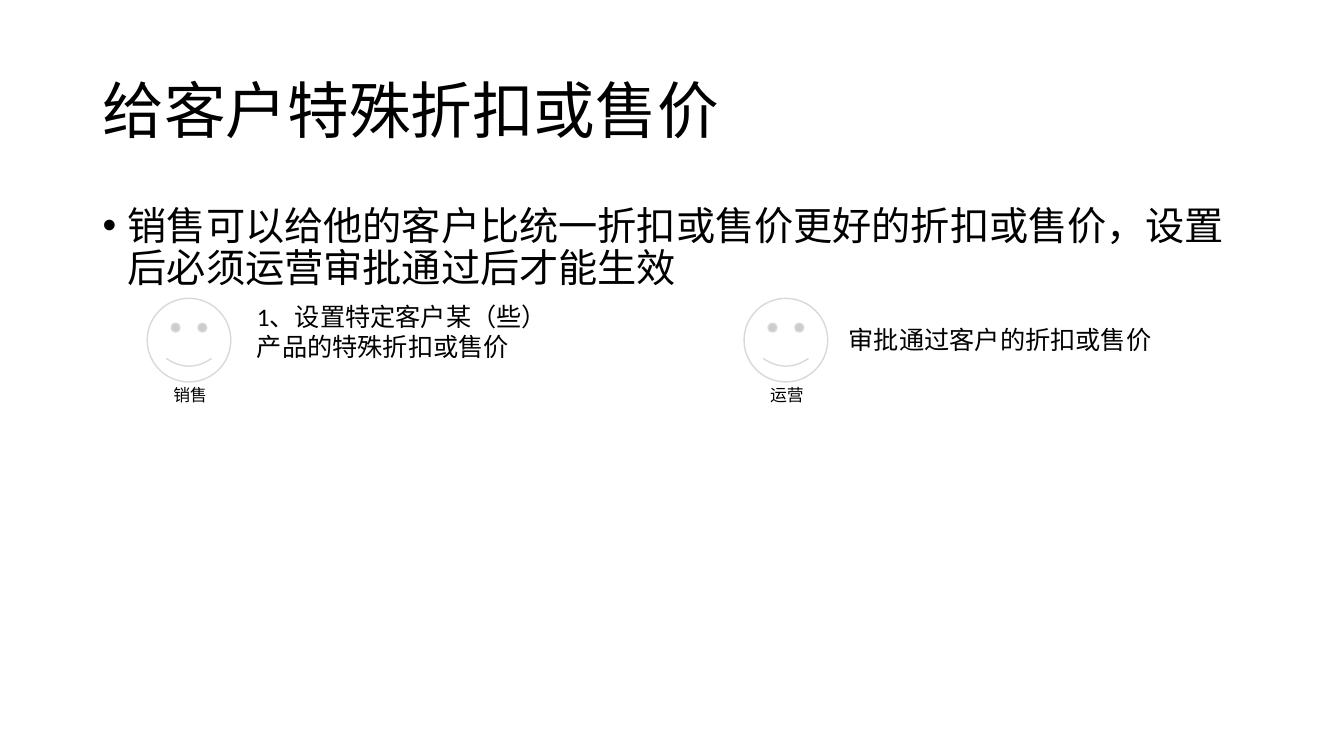
from dataclasses import dataclass

from lxml import etree
from pptx import Presentation
from pptx import util as u
from pptx.dml.color import RGBColor
from pptx.enum import lang, shapes, text
from pptx.oxml.ns import qn


@dataclass(frozen=True)
class Theme:
    font: str = "Calibri"
    ink: RGBColor = RGBColor(0, 0, 0)
    face: RGBColor = RGBColor(255, 255, 255)
    outline: RGBColor = RGBColor(0xD9, 0xD9, 0xD9)
    title: int = 44
    body: int = 28
    step: int = 18
    label: int = 12


THEME = Theme()


def add_text(slide, box, content, size, align=text.PP_ALIGN.LEFT,
             anchor=text.MSO_ANCHOR.TOP, wrap=True, line=1.0, before=0, bullet=None):
    s = slide.shapes.add_textbox(*map(u.Inches, box))
    tf = s.text_frame
    tf.word_wrap = wrap
    tf.vertical_anchor = anchor
    p = tf.paragraphs[0]
    p.alignment = align
    p.line_spacing = line
    p.space_before = u.Pt(before)
    if bullet:
        add_bullet(p, bullet)
    r = p.add_run()
    r.text = content
    r.font.name = THEME.font
    r.font.size = u.Pt(size)
    r.font.color.rgb = THEME.ink
    r.font.language_id = lang.MSO_LANGUAGE_ID.SIMPLIFIED_CHINESE
    return s


def add_bullet(p, char):
    indent = u.Inches(0.25)
    props = p._p.get_or_add_pPr()
    props.set("marL", str(indent))
    props.set("indent", str(-indent))
    etree.SubElement(props, qn("a:buFont")).set("typeface", "Arial")
    etree.SubElement(props, qn("a:buChar")).set("char", char)


def add_role(slide, left, name):
    top, size = 2.96, 0.83
    s = slide.shapes.add_shape(shapes.MSO_SHAPE.SMILEY_FACE,
                               *map(u.Inches, (left, top, size, size)))
    s.shadow.inherit = False
    s.fill.solid()
    s.fill.fore_color.rgb = THEME.face
    s.line.color.rgb = THEME.outline
    s.line.width = u.Pt(1)
    add_text(slide, (left - 0.07, 3.77, 0.99, 0.3), name, THEME.label,
             align=text.PP_ALIGN.CENTER)


def main():
    prs = Presentation()
    prs.slide_width, prs.slide_height = u.Inches(13.33), u.Inches(7.5)
    slide = prs.slides.add_slide(prs.slide_layouts[6])

    add_text(slide, (0.92, 0.4, 11.5, 1.45), "给客户特殊折扣或售价", THEME.title,
             anchor=text.MSO_ANCHOR.MIDDLE, line=0.9)
    add_text(slide, (0.92, 2, 11.5, 4.76),
             "销售可以给他的客户比统一折扣或售价更好的折扣或售价，设置后必须运营审批通过后才能生效",
             THEME.body, line=0.9, before=10, bullet="•")

    for left, name in ((1.46, "销售"), (7.38, "运营")):
        add_role(slide, left, name)
    add_text(slide, (8.32, 3.17, 3.23, 0.4), "审批通过客户的折扣或售价", THEME.step, wrap=False)
    add_text(slide, (2.45, 2.94, 3.08, 0.71),
             "1、设置特定客户某（些）产品的特殊折扣或售价", THEME.step)

    prs.save("out.pptx")


if __name__ == "__main__":
    main()
